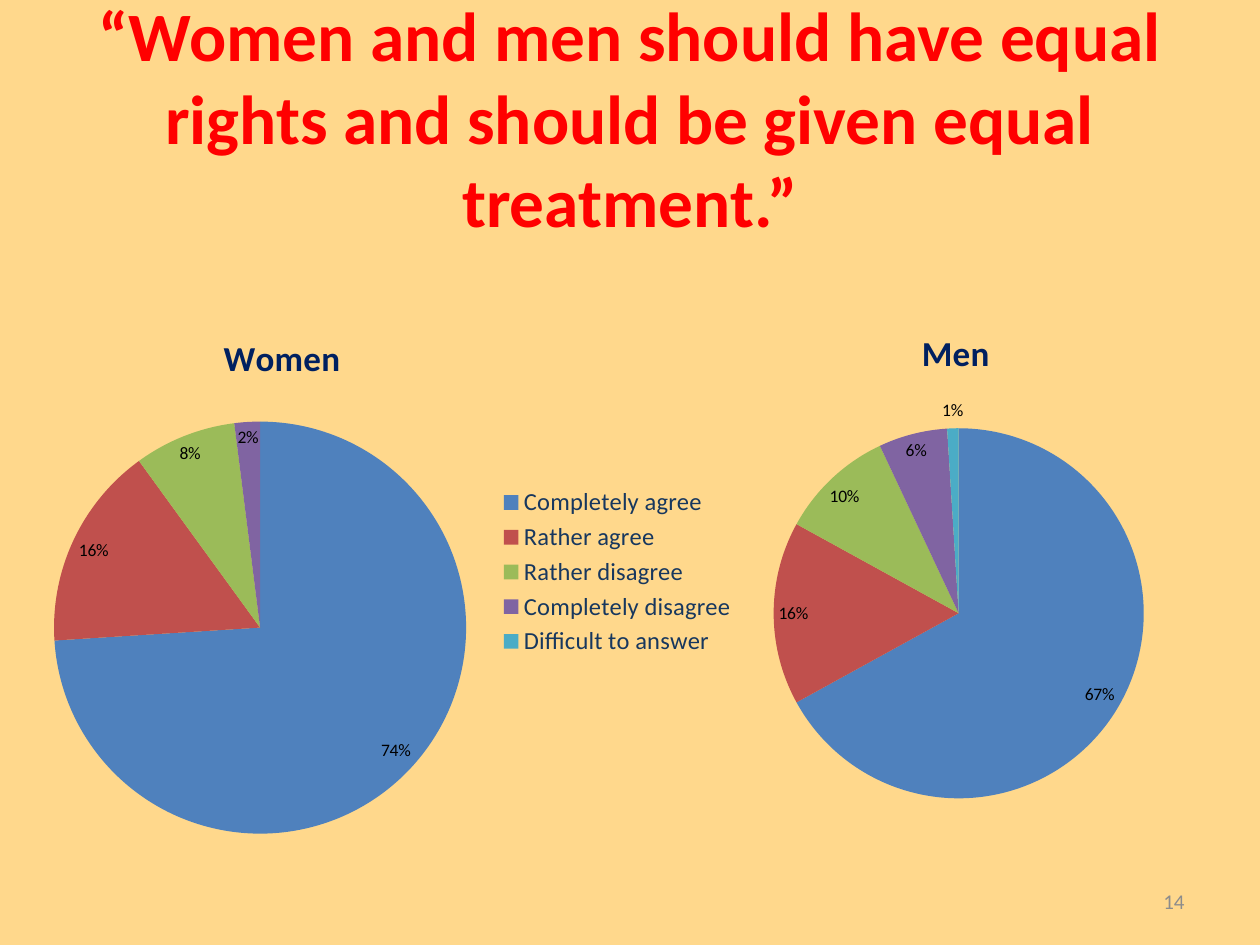
"""Build a slide comparing women's and men's views on equal rights in two pie charts."""
from lxml.etree import SubElement
from pptx import Presentation
from pptx.chart.data import CategoryChartData
from pptx.dml.color import RGBColor
from pptx.enum.chart import XL_CHART_TYPE, XL_LABEL_POSITION, XL_LEGEND_POSITION
from pptx.enum.text import MSO_ANCHOR, MSO_AUTO_SIZE, PP_ALIGN
from pptx.oxml import parse_xml
from pptx.oxml.ns import nsdecls, qn
from pptx.util import Inches, Pt


def style_font(font, size, color, bold=False):
    font.name = "Calibri"
    font.size = Pt(size)
    font.bold = bold
    font.color.rgb = RGBColor.from_string(color)


def place(element, shares, inner=False):
    layout = element.get_or_add_layout() if hasattr(element, "get_or_add_layout") else element.find(qn("c:layout"))
    if layout is None:
        layout = parse_xml(f"<c:layout {nsdecls('c')}/>")
        before = element.find(qn("c:tx"))
        if before is None:
            before = element.find(qn("c:legendPos"))
        if before is None:
            element.insert(0, layout)
        else:
            before.addnext(layout)
    for child in list(layout):
        layout.remove(child)
    manual = SubElement(layout, qn("c:manualLayout"))
    settings = [("layoutTarget", "inner")] if inner else []
    settings += [("xMode", "edge"), ("yMode", "edge"), *zip("xywh", shares)]
    for name, value in settings:
        SubElement(manual, qn(f"c:{name}")).set("val", str(value))


presentation = Presentation()
presentation.slide_width, presentation.slide_height = Inches(10), Inches(7.5)
slide = presentation.slides.add_slide(presentation.slide_layouts[5])
slide.background.fill.solid()
slide.background.fill.fore_color.rgb = RGBColor.from_string("FFD88C")

title = slide.shapes.title
title.left, title.top, title.width, title.height = map(Inches, (0.5, 0.3, 9, 1.25))
title.text_frame.auto_size = MSO_AUTO_SIZE.NONE
title.text_frame.vertical_anchor = MSO_ANCHOR.MIDDLE
paragraph = title.text_frame.paragraphs[0]
paragraph.alignment = PP_ALIGN.CENTER
run = paragraph.add_run()
run.text = "“Women and men should have equal rights and should be given equal treatment.”"
style_font(run.font, 39.6, "FF0000", True)

answers = ["Completely agree", "Rather agree", "Rather disagree", "Completely disagree", "Difficult to answer"]
slice_colors = ["4F81BD", "C0504D", "9BBB59", "8064A2", "4BACC6"]
pies = [
    ("Women", answers, (0.74, 0.16, 0.08, 0.02, 0), (0.25, 2.33, 5.67, 4.42),
     (0.03, 0.23, 0.58, 0.74), (0.26, 0.06), (0.65, 0.34, 0.34, 0.32)),
    ("Men", ["1", "2", "3", "4", "5"], (0.67, 0.16, 0.1, 0.06, 0.01), (5.17, 2.42, 4.83, 4.08),
     (0.2, 0.24, 0.61, 0.72), None, None),
]
for name, categories, values, box, plot_shares, title_shares, legend_shares in pies:
    chart_data = CategoryChartData(number_format="0%")
    chart_data.categories = categories
    chart_data.add_series(name, values)
    chart = slide.shapes.add_chart(XL_CHART_TYPE.PIE, *map(Inches, box), chart_data).chart
    style_font(chart.font, 10, "000000")
    chart_space = chart.element
    chart_space.find(qn("c:chart")).addnext(
        parse_xml(f"<c:spPr {nsdecls('c', 'a')}><a:noFill/><a:ln><a:noFill/></a:ln></c:spPr>"))

    chart.has_title = True
    run = chart.chart_title.text_frame.paragraphs[0].add_run()
    run.text = name
    style_font(run.font, 20, "002060", True)
    chart.chart_title.include_in_layout = False
    if title_shares:
        place(chart_space.find(".//" + qn("c:title")), title_shares)

    chart.has_legend = legend_shares is not None
    if chart.has_legend:
        chart.legend.position = XL_LEGEND_POSITION.RIGHT
        chart.legend.include_in_layout = False
        style_font(chart.legend.font, 14, "17375E")
        place(chart_space.find(".//" + qn("c:legend")), legend_shares)

    plot = chart.plots[0]
    plot.vary_by_categories = True
    place(chart_space.find(".//" + qn("c:plotArea")), plot_shares, inner=True)
    for index, color in enumerate(slice_colors):
        fill = plot.series[0].points[index].format.fill
        fill.solid()
        fill.fore_color.rgb = RGBColor.from_string(color)
    plot.has_data_labels = True
    labels = plot.data_labels
    labels.show_value, labels.show_percentage = True, False
    labels.number_format, labels.number_format_is_linked = "0%", False
    labels.position = XL_LABEL_POSITION.BEST_FIT
    style_font(labels.font, 10, "000000")

number_box = slide.shapes.add_textbox(*map(Inches, (7.17, 6.95, 2.33, 0.4)))
number_box.text_frame.word_wrap = True
number_box.text_frame.vertical_anchor = MSO_ANCHOR.MIDDLE
paragraph = number_box.text_frame.paragraphs[0]
paragraph.alignment = PP_ALIGN.RIGHT
run = paragraph.add_run()
run.text = "14"
style_font(run.font, 12, "8C8C8C")

presentation.save("out.pptx")
